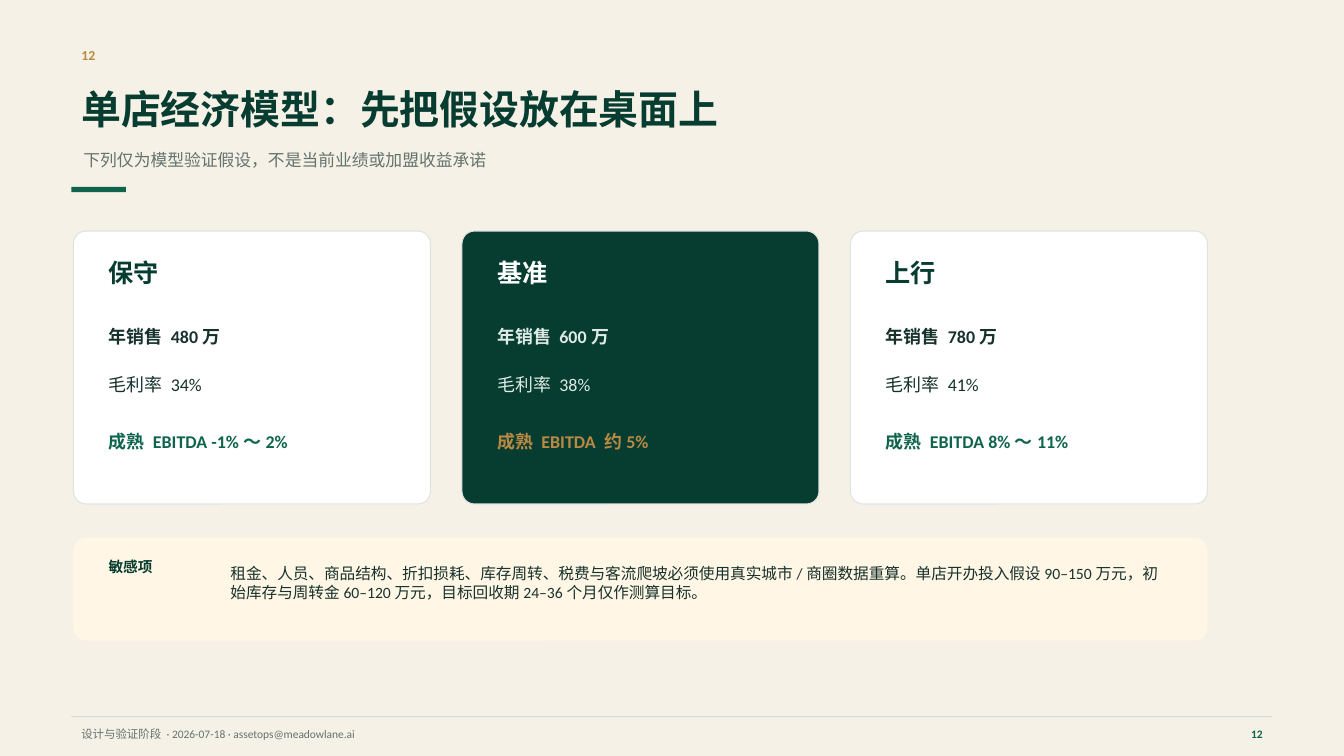
import pptx
import pptx.util
import pptx.dml.color
import pptx.enum.shapes
import pptx.enum.text

PX = 9525
FONT = "Calibri"
RADIUS = 12
SHAPE = pptx.enum.shapes.MSO_SHAPE
ALIGN = pptx.enum.text.PP_ALIGN

INK, FOREST, GREEN, GOLD = "17322C", "073C31", "0F654C", "B98A43"
GREY, MINT, WHITE, EDGE = "63736D", "DDEBE4", "FFFFFF", "DDE3DF"

LIGHT = {"fill": WHITE, "title": FOREST, "body": INK, "result": GREEN}
DARK = {"fill": FOREST, "title": WHITE, "body": MINT, "result": GOLD}
SCENARIOS = [
    ("保守", "年销售 480万", "毛利率 34%", "成熟 EBITDA -1%～2%", LIGHT),
    ("基准", "年销售 600万", "毛利率 38%", "成熟 EBITDA 约5%", DARK),
    ("上行", "年销售 780万", "毛利率 41%", "成熟 EBITDA 8%～11%", LIGHT),
]
SENSITIVITY = (
    "租金、人员、商品结构、折扣损耗、库存周转、税费与客流爬坡必须使用真实城市/商圈数据重算。"
    "单店开办投入假设90–150万元，初始库存与周转金60–120万元，目标回收期24–36个月仅作测算目标。"
)


def rgb(value):
    return pptx.dml.color.RGBColor.from_string(value)


def emu(*lengths):
    return [pptx.util.Emu(n * PX) for n in lengths]


def add_text(s, x, y, w, h, text, size, color, bold=False, align=ALIGN.LEFT):
    tf = s.shapes.add_textbox(*emu(x, y, w, h)).text_frame
    tf.word_wrap = True
    tf.vertical_anchor = pptx.enum.text.MSO_ANCHOR.MIDDLE
    p = tf.paragraphs[0]
    p.alignment = align
    r = p.add_run()
    r.text = text
    formats = {"name": FONT, "size": pptx.util.Pt(size), "bold": bold}
    for key, value in formats.items():
        setattr(r.font, key, value)
    r.font.color.rgb = rgb(color)


def add_panel(s, x, y, w, h, fill, line=None, radius=0):
    kind = SHAPE.ROUNDED_RECTANGLE if radius else SHAPE.RECTANGLE
    sp = s.shapes.add_shape(kind, *emu(x, y, w, h))
    sp.shadow.inherit = False
    if radius:
        sp.adjustments[0] = radius / min(w, h)
    sp.fill.solid()
    sp.fill.fore_color.rgb = rgb(fill)
    if line:
        sp.line.color.rgb = rgb(line)
        sp.line.width = pptx.util.Pt(0.75)
    else:
        sp.line.fill.background()


def add_header(s, x, y, w, number, title, subtitle):
    add_text(s, x, y, 54, 32, number, 9.8, GOLD, True)
    add_text(s, x, y + 38, w, 58, title, 28.5, FOREST, True)
    add_text(s, x + 2, y + 98, w - 40, 36, subtitle, 12, GREY)
    add_panel(s, x, y + 142, 52, 5, GREEN)


def add_scenario(s, x, y, w, h, title, sales, margin, result, theme):
    add_panel(s, x, y, w, h, theme["fill"], EDGE, RADIUS)
    rows = [
        (20, 38, title, 18, theme["title"], True),
        (86, 28, sales, 12.8, theme["body"], True),
        (132, 28, margin, 12.8, theme["body"], False),
        (178, 44, result, 12.8, theme["result"], True),
    ]
    for top, height, *content in rows:
        add_text(s, x + 24, y + top, w - 48, height, *content)


def add_note(s, x, y, w, h, label, body):
    add_panel(s, x, y, w, h, "FFF6E5", radius=RADIUS)
    add_text(s, x + 24, y + 14, 120, 28, label, 10.5, FOREST, True)
    add_text(s, x + 140, y + 12, w - 170, 62, body, 11.2, INK)


def add_footer(s, x, y, w, text, number):
    add_panel(s, x, y, w, 1, "D5DDD8")
    add_text(s, x, y + 6, 900, 22, text, 8.2, GREY)
    add_text(s, x + w - 52, y + 6, 52, 22, number, 8.2, GREEN, True, ALIGN.RIGHT)


def main():
    prs = pptx.Presentation()
    prs.slide_width, prs.slide_height = emu(1280, 720)
    s = prs.slides.add_slide(prs.slide_layouts[6])
    s.background.fill.solid()
    s.background.fill.fore_color.rgb = rgb("F6F1E6")

    add_header(s, 68, 36, 1120, "12", "单店经济模型：先把假设放在桌面上",
               "下列仅为模型验证假设，不是当前业绩或加盟收益承诺")
    for i, scenario in enumerate(SCENARIOS):
        add_scenario(s, 70 + i * 370, 220, 340, 260, *scenario)
    add_note(s, 70, 512, 1080, 98, "敏感项", SENSITIVITY)
    add_footer(s, 68, 682, 1144,
               "设计与验证阶段 · 2026-07-18 · assetops@meadowlane.ai", "12")
    prs.save("out.pptx")


if __name__ == "__main__":
    main()
